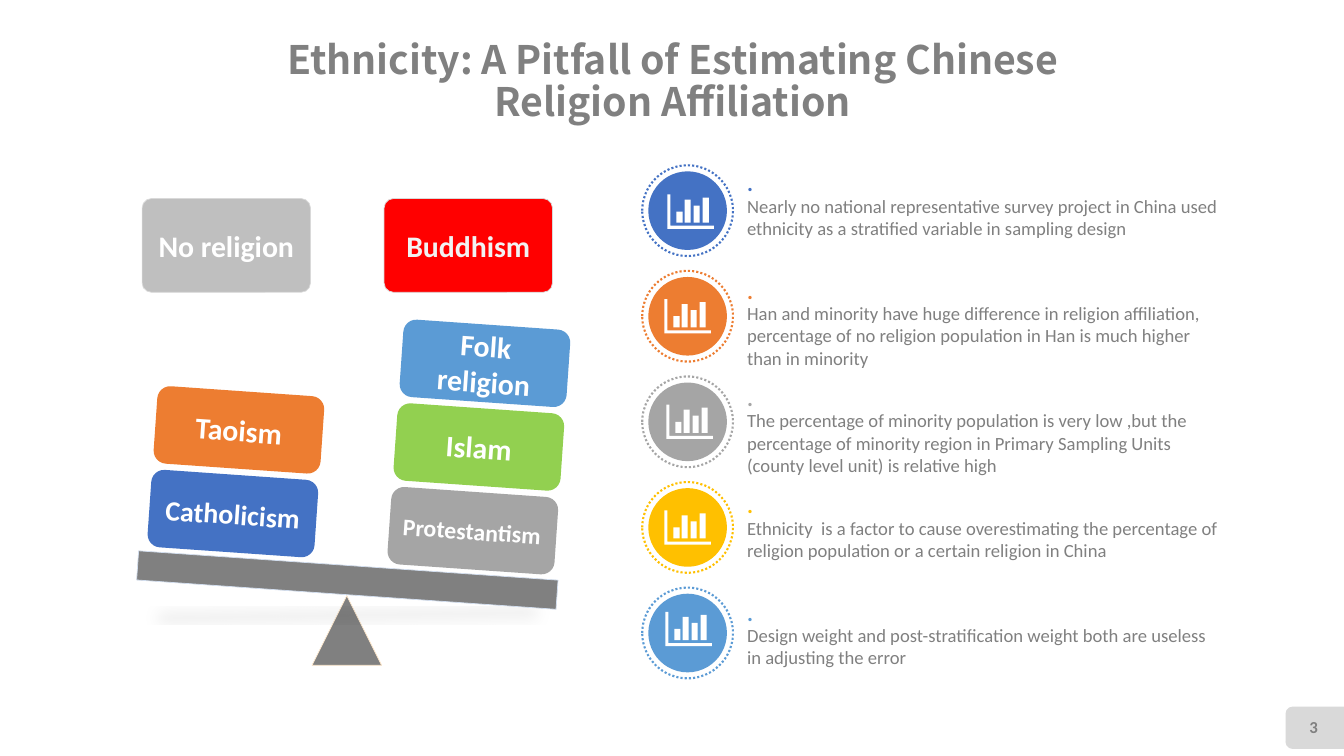
from lxml.etree import SubElement
from pptx import Presentation
from pptx.dml.color import RGBColor
from pptx.enum.dml import MSO_LINE
from pptx.enum.shapes import MSO_SHAPE
from pptx.enum.text import MSO_ANCHOR, MSO_AUTO_SIZE, PP_ALIGN
from pptx.oxml.ns import qn
from pptx.util import Inches, Pt

WHITE = RGBColor(0xFF, 0xFF, 0xFF)
OFF_WHITE = RGBColor(0xF2, 0xF2, 0xF2)
GRAY = RGBColor(0x80, 0x80, 0x80)
PALE_GRAY = RGBColor(0xD9, 0xD9, 0xD9)
LIGHT_GRAY = RGBColor(0xBF, 0xBF, 0xBF)
MID_GRAY = RGBColor(0xA5, 0xA5, 0xA5)
PALE_BLUE = RGBColor(0xD2, 0xDE, 0xEF)
CREAM = RGBColor(0xFF, 0xE8, 0xCC)
RED = RGBColor(0xFF, 0x00, 0x00)
GREEN = RGBColor(0x92, 0xD0, 0x50)
BLUE = RGBColor(0x44, 0x72, 0xC4)
SKY = RGBColor(0x5B, 0x9B, 0xD5)
ORANGE = RGBColor(0xED, 0x7D, 0x31)
YELLOW = RGBColor(0xFF, 0xC0, 0x00)

TILT = 4

# Loose boxes above the scale: left, text, fill, text colour
LOOSE = [(0.05, "No religion", LIGHT_GRAY, WHITE),
         (2.45, "Buddhism", RED, OFF_WHITE)]

# Stacks on the plank, bottom block first: text, fill, size, alignment
STACKS = [
    (2.5, 2.91, [("Protestantism", MID_GRAY, 17, PP_ALIGN.LEFT),
                 ("Islam", GREEN, 21.3, PP_ALIGN.CENTER),
                 ("Folk religion", SKY, 21.3, PP_ALIGN.CENTER)]),
    (0.12, 2.74, [("Catholicism", BLUE, 20, PP_ALIGN.CENTER),
                  ("Taoism", ORANGE, 21.3, PP_ALIGN.CENTER)]),
]

# Findings: colour, icon offset in the ring, text height, text
FINDINGS = [
    (BLUE, (0.25, 0.29), 0.45, "Nearly no national representative survey project in China "
     "used ethnicity as a stratified variable in sampling design"),
    (ORANGE, (0.22, 0.28), 0.67, "Han and minority have huge difference in religion affiliation, "
     "percentage of no religion population in Han is much higher than in minority"),
    (MID_GRAY, (0.24, 0.28), 0.67, "The percentage of minority population is very low ,but the "
     "percentage of minority region in Primary Sampling Units (county level unit) is relative high"),
    (YELLOW, (0.22, 0.28), 0.45, "Ethnicity  is a factor to cause overestimating the percentage of "
     "religion population or a certain religion in China"),
    (SKY, (0.23, 0.24), 0.45, "Design weight and post-stratification weight both are useless "
     "in adjusting the error"),
]

# Chart icon in hundredths of an inch: bar left and top
ICON_BARS = [(9, 17), (17, 5), (26, 11), (35, 3)]


def set_text(sp, text, color, size, align=PP_ALIGN.LEFT, name="Calibri", bold=True, **frame):
    tf = sp.text_frame
    for attr, value in {"word_wrap": True, "vertical_anchor": MSO_ANCHOR.MIDDLE, **frame}.items():
        setattr(tf, attr, value)
    p = tf.paragraphs[0]
    p.alignment = align
    r = p.add_run()
    r.text = text
    for attr, value in {"name": name, "size": Pt(size), "bold": bold}.items():
        setattr(r.font, attr, value)
    r.font.color.rgb = color
    return p


def style(sp, fill=None, line=None, width=0.5):
    sp.shadow.inherit = False
    if fill is None:
        sp.fill.background()
    else:
        sp.fill.solid()
        sp.fill.fore_color.rgb = fill
    if line is None:
        sp.line.fill.background()
    else:
        sp.line.color.rgb = line
        sp.line.width = Pt(width)


def add_preset(s, kind, box, fill=None, line=None, width=0.5, rotation=0):
    sp = s.shapes.add_shape(kind, *map(Inches, box))
    style(sp, fill, line, width)
    sp.rotation = rotation
    return sp


def add_text(s, box, *args, **options):
    sp = s.shapes.add_textbox(*map(Inches, box))
    set_text(sp, *args, **options)


def add_floor_shadow(sp):
    effects = sp._element.spPr.find(qn("a:effectLst"))
    shadow = SubElement(effects, qn("a:outerShdw"), blurRad=str(Pt(12)), dist=str(Pt(25)),
                        dir="5400000", sx="90000", sy="-19000", rotWithShape="0")
    color = SubElement(shadow, qn("a:srgbClr"), val="000000")
    SubElement(color, qn("a:alpha"), val="15000")


def add_title(s, box):
    sp = s.shapes.title
    sp.left, sp.top, sp.width, sp.height = map(Inches, box)
    p = set_text(sp, "Ethnicity: A Pitfall of Estimating Chinese Religion Affiliation",
                 GRAY, 28, PP_ALIGN.CENTER, "Noto Sans CJK SC", auto_size=MSO_AUTO_SIZE.NONE,
                 margin_left=0, margin_right=0, margin_top=0, margin_bottom=0)
    p.line_spacing = 0.9


def add_page_number(s, box):
    x, y, w, h = box
    # The tab is turned, so its width and height swap around the same centre
    add_preset(s, MSO_SHAPE.ROUND_2_SAME_RECTANGLE,
               (x + (w - h) / 2, y + (h - w) / 2, h, w), PALE_GRAY, rotation=270)
    add_text(s, (x, y, 0.56, 0.4), "3", GRAY, 12, PP_ALIGN.CENTER)


def add_scale(s, box):
    x, y, w, h = box
    # Loose boxes
    for dx, text, fill, color in LOOSE:
        sp = add_preset(s, MSO_SHAPE.ROUNDED_RECTANGLE, (x + dx, y, 1.67, 0.93), fill, PALE_GRAY)
        sp.adjustments[0] = 0.1
        set_text(sp, text, color, 21.3, PP_ALIGN.CENTER)
    # Pivot and plank
    add_preset(s, MSO_SHAPE.ISOSCELES_TRIANGLE,
               (x + w / 2 - 0.35, y + h - 0.69, 0.69, 0.69), GRAY, CREAM)
    plank = add_preset(s, MSO_SHAPE.RECTANGLE, (x, y + 3.64, w, 0.29), GRAY, PALE_BLUE,
                       rotation=TILT)
    add_floor_shadow(plank)
    # Stacked blocks
    for dx, dy, blocks in STACKS:
        for i, (text, fill, size, align) in enumerate(blocks):
            sp = add_preset(s, MSO_SHAPE.ROUNDED_RECTANGLE,
                            (x + dx + 0.06 * i, y + dy - 0.83 * i, 1.66, 0.77), fill, rotation=TILT)
            set_text(sp, text, WHITE, size, align)


def add_chart_icon(s, x, y):
    # Axes, then bars
    fb = s.shapes.build_freeform(46, 34, scale=Inches(0.01))
    fb.add_line_segments([(0, 34), (0, 0), (3, 0), (3, 31), (46, 31)])
    for left, top in ICON_BARS:
        fb.move_to(left + 6, 28)
        fb.add_line_segments([(left, 28), (left, top), (left + 6, top)])
    style(fb.convert_to_shape(Inches(x), Inches(y)), WHITE)


def add_findings(s, box):
    x, y, w, h = box
    ring, disc = 0.9, 0.78
    ring_step = (h - ring) / (len(FINDINGS) - 1)
    text_step = 1.065
    text_x = x + 1.04
    fit = {"auto_size": MSO_AUTO_SIZE.SHAPE_TO_FIT_TEXT, "margin_left": 0, "margin_right": 0,
           "margin_top": 0, "margin_bottom": 0}
    for i, (color, (icon_x, icon_y), height, text) in enumerate(FINDINGS):
        # Badge
        top = y + ring_step * i
        inset = (ring - disc) / 2
        add_preset(s, MSO_SHAPE.OVAL, (x + inset, top + inset, disc, disc), color)
        sp = add_preset(s, MSO_SHAPE.OVAL, (x, top, ring, ring), line=color, width=1.5)
        sp.line.dash_style = MSO_LINE.ROUND_DOT
        add_chart_icon(s, x + icon_x, top + icon_y)
        # Dot and text
        text_y = y + 0.29 + text_step * i
        add_text(s, (text_x, text_y, w - 1.04, height), text, GRAY, 13.3, bold=False,
                 vertical_anchor=MSO_ANCHOR.TOP, **fit)
        add_text(s, (text_x, text_y - 0.25, 0.06, 0.27), ".", color, 16, word_wrap=False, **fit)


def main():
    prs = Presentation()
    prs.slide_width, prs.slide_height = Inches(13.33), Inches(7.5)
    s = prs.slides.add_slide(prs.slide_layouts[5])
    add_page_number(s, (12.75, 7.01, 0.59, 0.42))
    add_title(s, (2.56, 0.56, 8.22, 0.52))
    add_scale(s, (1.36, 1.97, 4.17, 4.63))
    add_findings(s, (6.37, 1.64, 5.74, 5.09))
    prs.save("out.pptx")


if __name__ == "__main__":
    main()
